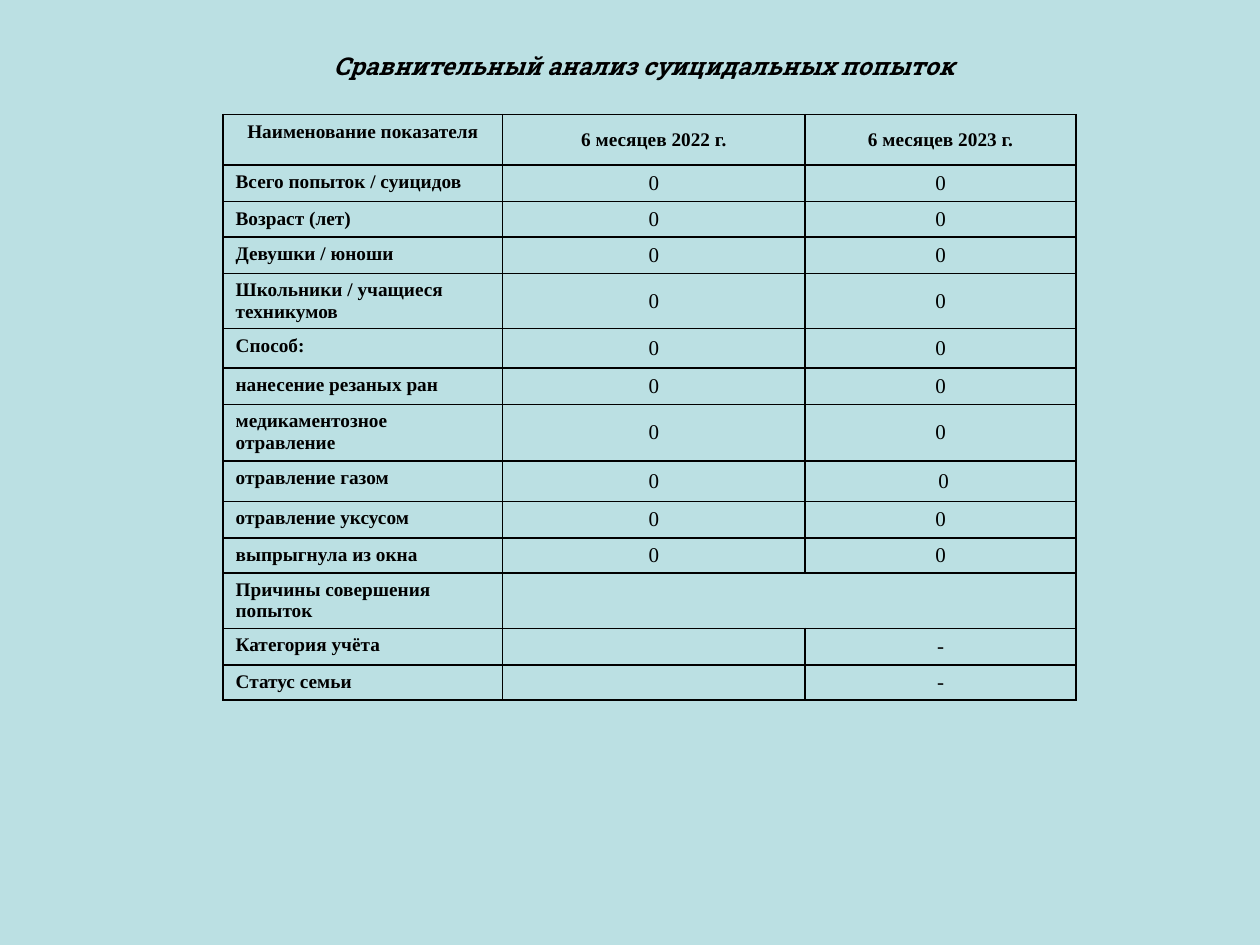
from lxml import etree
from pptx import Presentation
from pptx.dml.color import RGBColor
from pptx.enum.text import MSO_ANCHOR, PP_ALIGN
from pptx.oxml.ns import qn
from pptx.util import Inches, Pt

BACKGROUND = RGBColor(0xBB, 0xE0, 0xE3)
BLACK = RGBColor(0, 0, 0)
CENTER, LEFT = PP_ALIGN.CENTER, PP_ALIGN.LEFT
MIDDLE, TOP = MSO_ANCHOR.MIDDLE, MSO_ANCHOR.TOP

TITLE = "Сравнительный анализ суицидальных попыток"
COLUMN_WIDTHS = [2.22, 2.4, 2.15]
INDICATORS = [
    (0.4, "Наименование показателя", "6 месяцев 2022 г.", "6 месяцев 2023 г."),
    (0.29, "Всего попыток / суицидов", "0", "0"),
    (0.28, "Возраст (лет)", "0", "0"),
    (0.29, "Девушки / юноши", "0", "0"),
    (0.44, "Школьники / учащиеся техникумов", "0", "0"),
    (0.31, "Способ:", "0", "0"),
    (0.29, "нанесение резаных ран", "0", "0"),
    (0.45, "медикаментозное отравление", "0", "0"),
    (0.32, "отравление газом", "0", "0"),
    (0.29, "отравление уксусом", "0", "0"),
    (0.28, "выпрыгнула из окна", "0", "0"),
    (0.44, "Причины совершения попыток", "", ""),
    (0.29, "Категория учёта", "", "-"),
    (0.28, "Статус семьи", "", "-"),
]
REASONS_ROW = 11
GAS_ROW = 8


def write_text(frame, text, size, font="Times New Roman", bold=False,
               italic=False, align=LEFT):
    paragraph = frame.paragraphs[0]
    paragraph.alignment = align
    if not text:
        etree.SubElement(paragraph._p, qn("a:endParaRPr"), sz=str(size * 100))
        return
    run = paragraph.add_run()
    run.text = text
    run.font.size = Pt(size)
    run.font.name = font
    run.font.bold = bold
    run.font.italic = italic
    run.font.color.rgb = BLACK


def draw_borders(cell):
    properties = cell._tc.get_or_add_tcPr()
    for side in ("a:lnL", "a:lnR", "a:lnT", "a:lnB"):
        border = etree.SubElement(properties, qn(side), w=str(Pt(1)))
        fill = etree.SubElement(border, qn("a:solidFill"))
        etree.SubElement(fill, qn("a:srgbClr"), val=str(BLACK))


def add_title(slide, left, top, width, height):
    title = slide.shapes.add_textbox(left, top, width, height)
    frame = title.text_frame
    frame.word_wrap = True
    frame.vertical_anchor = MIDDLE
    write_text(frame, TITLE, 14, font="Roboto Slab", bold=True, italic=True,
               align=CENTER)


def add_comparison(slide, left, top, width, height):
    table = slide.shapes.add_table(
        len(INDICATORS), len(COLUMN_WIDTHS), left, top, width, height).table
    table.first_row = False
    table.horz_banding = False
    for column, column_width in zip(table.columns, COLUMN_WIDTHS):
        column.width = Inches(column_width)
    for row_index, (row_height, *texts) in enumerate(INDICATORS):
        table.rows[row_index].height = Inches(row_height)
        for column_index, text in enumerate(texts):
            is_header, is_label = row_index == 0, column_index == 0
            strong = is_header or is_label
            cell = table.cell(row_index, column_index)
            cell.vertical_anchor = TOP if is_label else MIDDLE
            cell.margin_top = Inches(0.05 if is_label else 0.04)
            cell.margin_bottom = Inches(0.02 if is_label else 0.04)
            write_text(cell.text_frame, text, 11 if strong else 12, bold=strong,
                       align=LEFT if is_label and not is_header else CENTER)
            draw_borders(cell)
            cell.fill.background()
    table.cell(GAS_ROW, 2).margin_left = Inches(0.15)
    table.cell(REASONS_ROW, 1).merge(table.cell(REASONS_ROW, 2))


def main():
    presentation = Presentation()
    presentation.slide_width = Inches(10)
    presentation.slide_height = Inches(7.5)
    slide = presentation.slides.add_slide(presentation.slide_layouts[6])
    slide.background.fill.solid()
    slide.background.fill.fore_color.rgb = BACKGROUND
    add_title(slide, Inches(1.06), Inches(0.29), Inches(8.11), Inches(0.47))
    add_comparison(slide, Inches(1.77), Inches(0.91), Inches(6.77), Inches(4.65))
    presentation.save("out.pptx")


if __name__ == "__main__":
    main()
